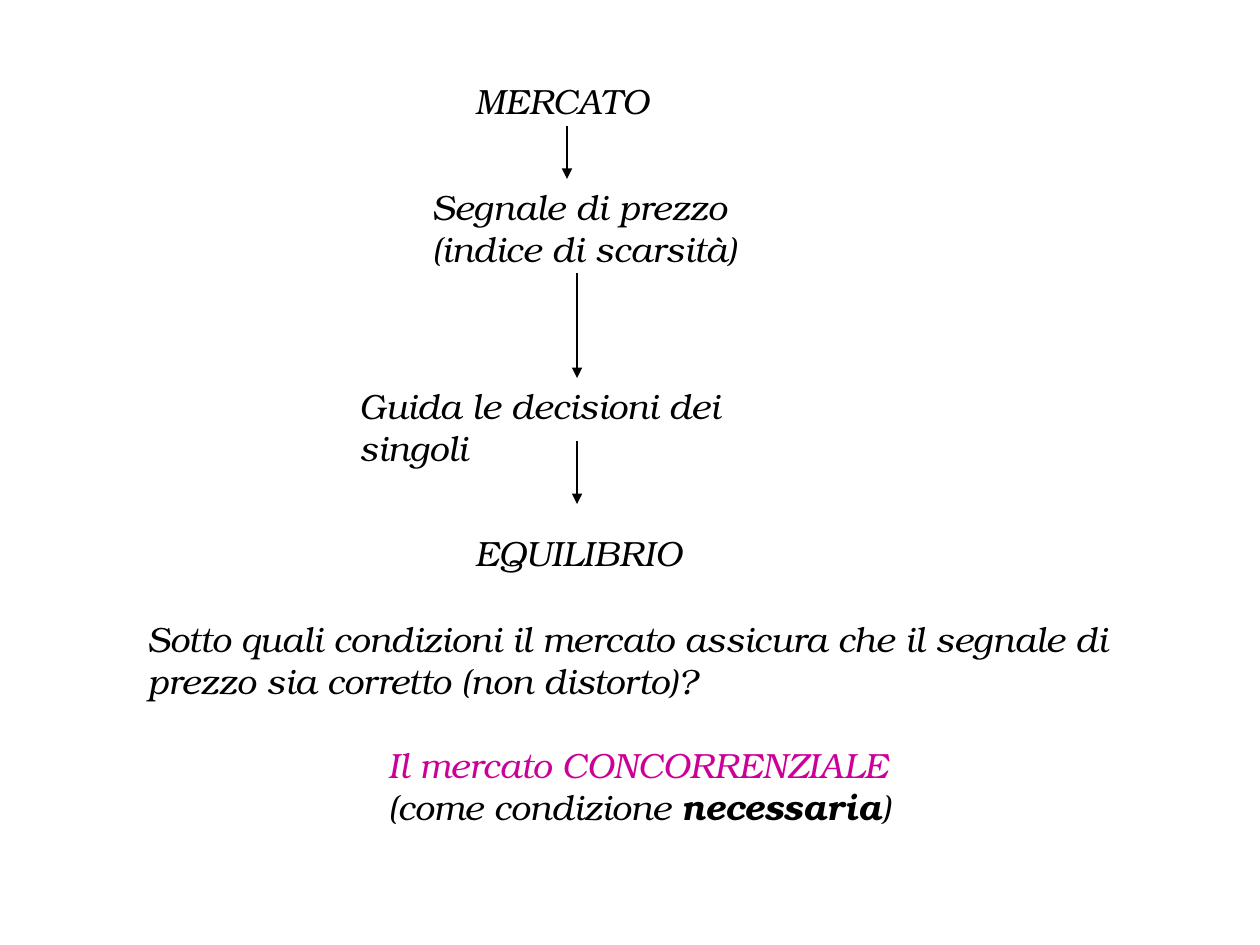
from pptx import Presentation
from pptx.dml.color import RGBColor
from pptx.enum.shapes import MSO_CONNECTOR as CONN, MSO_SHAPE as SHAPE
from pptx.enum.text import MSO_ANCHOR as ANCHOR, MSO_AUTO_SIZE as AUTO, PP_ALIGN as ALIGN
from pptx.oxml.ns import qn
from pptx.util import Inches, Pt
from lxml.etree import SubElement

FONT = "TeX Gyre Bonum"
COLORS = {"text": "000000", "accent": "CC0099", "border": "FFFFFF"}

MARKET = ["MERCATO"]
SIGNAL = ["Segnale di prezzo", "(indice di scarsità)"]
GUIDE = ["Guida le decisioni dei singoli"]
BALANCE = ["EQUILIBRIO"]
QUESTION = ["Sotto quali condizioni il mercato assicura che il segnale di "
            "prezzo sia corretto (non distorto)?"]
ANSWER = ["Il mercato CONCORRENZIALE", ("(come condizione ", "necessaria", ")")]

FLOW = [
    (MARKET, (3.67, 0.58, 1.6, 0.43), False),
    (GUIDE, (2.75, 3, 3.95, 0.77), True),
    (BALANCE, (3.67, 4.17, 1.84, 0.43), False),
]
SIGNAL_BOX = (3.33, 1.42, 2.64, 0.78)
ARROWS = [(4.5, 1, 1.42), (4.58, 2.17, 3), (4.58, 3.5, 4)]


def rgb(name):
    return RGBColor.from_string(COLORS[name])


def write(sp, lines, wrap):
    tf = sp.text_frame
    tf.word_wrap = wrap
    tf.auto_size = AUTO.SHAPE_TO_FIT_TEXT
    tf.vertical_anchor = ANCHOR.TOP
    for i, line in enumerate(lines):
        p = tf.add_paragraph() if i else tf.paragraphs[0]
        p.alignment = ALIGN.LEFT
        for text in [line] if isinstance(line, str) else line:
            r = p.add_run()
            r.text = text
            r.font.name = FONT
            r.font.size = Pt(20)
            r.font.italic = True
            r.font.color.rgb = rgb("text")
    return tf


def add_text(shapes, lines, box, wrap):
    return write(shapes.add_textbox(*map(Inches, box)), lines, wrap)


def add_arrow(shapes, x, top, bottom):
    c = shapes.add_connector(CONN.STRAIGHT, *map(Inches, (x, top, x, bottom)))
    c.line.color.rgb = rgb("text")
    c.line.width = Pt(0.75)
    SubElement(c.line._get_or_add_ln(), qn("a:tailEnd"), type="triangle")
    SubElement(c._element.spPr, qn("a:effectLst"))


prs = Presentation()
prs.slide_width, prs.slide_height = Inches(10), Inches(7.5)
s = prs.slides.add_slide(prs.slide_layouts[6])

flow = s.shapes.add_group_shape().shapes
for lines, box, wrap in FLOW:
    add_text(flow, lines, box, wrap)

signal = flow.add_shape(SHAPE.RECTANGLE, *map(Inches, SIGNAL_BOX))
signal.shadow.inherit = False
signal.fill.background()
signal.line.color.rgb = rgb("border")
signal.line.width = Pt(0.75)
write(signal, SIGNAL, False)

for arrow in ARROWS:
    add_arrow(flow, *arrow)

add_text(s.shapes, QUESTION, (1.07, 4.85, 7.84, 0.77), True)
tf = add_text(s.shapes, ANSWER, (2.98, 5.85, 4.27, 0.77), False)
tf.paragraphs[0].runs[0].font.color.rgb = rgb("accent")
tf.paragraphs[1].runs[1].font.bold = True

prs.save("out.pptx")
